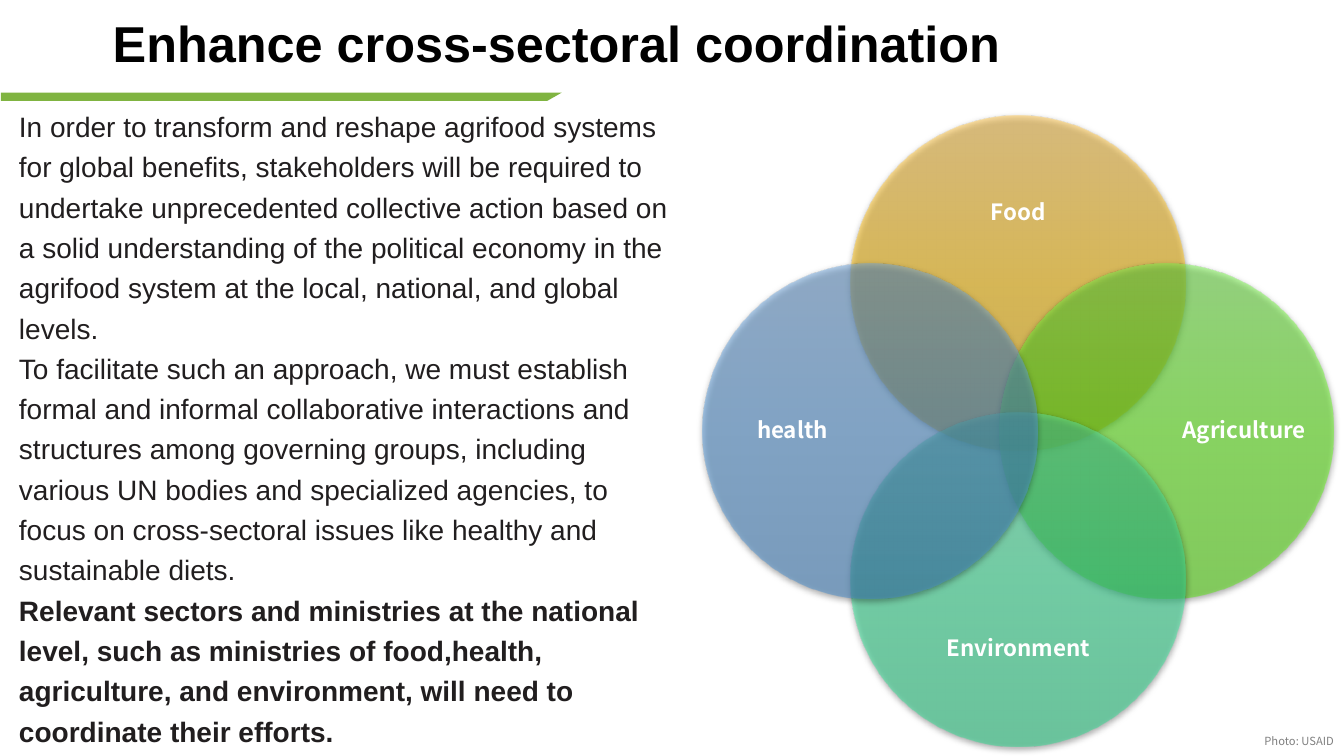
from lxml import etree
from pptx import Presentation
from pptx.dml.color import RGBColor
from pptx.enum.shapes import MSO_SHAPE
from pptx.enum.text import MSO_ANCHOR, PP_ALIGN
from pptx.util import Inches, Pt

OVAL = MSO_SHAPE.OVAL
TOP, MIDDLE = MSO_ANCHOR.TOP, MSO_ANCHOR.MIDDLE
LEFT, CENTER, RIGHT = PP_ALIGN.LEFT, PP_ALIGN.CENTER, PP_ALIGN.RIGHT
DRAWING = "http://schemas.openxmlformats.org/drawingml/2006/main"

COLORS = {
    "title": "000000",
    "body": "211E1F",
    "credit": "808080",
    "label": "FFFFFF",
    "banner": "80B441",
    "shadow": "000000",
}
HEADING_FONT = "Arial"
LABEL_FONT = "Noto Sans CJK SC"

BODY = [
    ("In order to transform and reshape agrifood systems for global benefits, "
     "stakeholders will be required to undertake unprecedented collective action "
     "based on a solid understanding of the political economy in the agrifood "
     "system at the local, national, and global levels.", False),
    ("To facilitate such an approach, we must establish formal and informal "
     "collaborative interactions and structures among governing groups, including "
     "various UN bodies and specialized agencies, to focus on cross-sectoral "
     "issues like healthy and sustainable diets.", False),
    ("Relevant sectors and ministries at the national level, such as ministries "
     "of food,health, agriculture, and environment, will need to coordinate "
     "their efforts.", True),
]

# Sector name, direction from the centre (x, y), gradient from top to bottom
SECTORS = [
    ("Food", 0, -1, ("FFC64B", "FFC000", "E3AB00")),
    ("Agriculture", 1, 0, ("7AF350", "63F916", "56E50C")),
    ("Environment", 0, 1, ("5EE6A6", "37E99C", "27D88C")),
    ("health", -1, 0, ("71A6DB", "559BDB", "448ACA")),
]
VENN_X, VENN_Y = 10.1, 4.28
DIAMETER, CIRCLE_OFFSET = 3.32, 1.47
LABEL_OFFSET_X, LABEL_OFFSET_Y = 2.24, 2.16
LABEL_LONG, LABEL_SHORT = 2.55, 1.28


class SlideBuilder:
    def __init__(self, slide):
        self.slide = slide

    def text(self, box, paragraphs, size, color, font, align=LEFT, anchor=TOP,
             spacing=1.0, margins=True, shapes=None):
        """Add a text box; paragraphs are (text, bold) pairs."""
        shapes = shapes or self.slide.shapes
        shape = shapes.add_textbox(*[Inches(value) for value in box])
        frame = shape.text_frame
        frame.word_wrap = True
        frame.vertical_anchor = anchor
        if not margins:
            frame.margin_left = frame.margin_right = 0
            frame.margin_top = frame.margin_bottom = 0
        for index, (text, bold) in enumerate(paragraphs):
            paragraph = frame.add_paragraph() if index else frame.paragraphs[0]
            paragraph.text = text
            paragraph.alignment = align
            paragraph.line_spacing = spacing
            paragraph.font.name = font
            paragraph.font.size = Pt(size)
            paragraph.font.bold = bold
            paragraph.font.color.rgb = RGBColor.from_string(COLORS[color])

    def banner(self, points, color):
        start, *others = [(Inches(x), Inches(y)) for x, y in points]
        builder = self.slide.shapes.build_freeform(*start)
        builder.add_line_segments(others, close=True)
        shape = builder.convert_to_shape()
        shape.shadow.inherit = False
        shape.fill.solid()
        shape.fill.fore_color.rgb = RGBColor.from_string(COLORS[color])
        shape.line.fill.background()

    def circle(self, shapes, center_x, center_y, gradient):
        """Add a half-transparent gradient circle with a soft shadow."""
        shape = shapes.add_shape(
            OVAL, Inches(center_x - DIAMETER / 2), Inches(center_y - DIAMETER / 2),
            Inches(DIAMETER), Inches(DIAMETER))
        shape.shadow.inherit = False
        shape.line.fill.background()
        stops = "".join(
            f'<a:gs pos="{index * 50000}"><a:srgbClr val="{color}">'
            f'<a:alpha val="50000"/></a:srgbClr></a:gs>'
            for index, color in enumerate(gradient))
        properties = shape._element.spPr
        fill = etree.fromstring(
            f'<a:gradFill xmlns:a="{DRAWING}" rotWithShape="1"><a:gsLst>{stops}'
            f'</a:gsLst><a:lin ang="5400000" scaled="0"/></a:gradFill>')
        properties.find(f"{{{DRAWING}}}prstGeom").addnext(fill)
        shadow = etree.fromstring(
            f'<a:outerShdw xmlns:a="{DRAWING}" blurRad="{Pt(4.5)}" '
            f'dist="{Pt(1.5)}" dir="5400000" rotWithShape="0">'
            f'<a:srgbClr val="{COLORS["shadow"]}"><a:alpha val="63000"/>'
            f'</a:srgbClr></a:outerShdw>')
        properties.find(f"{{{DRAWING}}}effectLst").append(shadow)

    def venn(self, sectors):
        shapes = self.slide.shapes.add_group_shape().shapes
        for name, across, down, gradient in sectors:
            self.circle(shapes, VENN_X + across * CIRCLE_OFFSET,
                        VENN_Y + down * CIRCLE_OFFSET, gradient)
            # Side labels stand in tall boxes, the others in wide ones
            width, height = ((LABEL_SHORT, LABEL_LONG) if across
                             else (LABEL_LONG, LABEL_SHORT))
            box = (VENN_X + across * LABEL_OFFSET_X - width / 2,
                   VENN_Y + down * LABEL_OFFSET_Y - height / 2, width, height)
            self.text(box, [(name, True)], 16, "label", LABEL_FONT, CENTER, MIDDLE,
                      0.9, margins=False, shapes=shapes)


def main():
    presentation = Presentation()
    presentation.slide_width = Inches(13.33)
    presentation.slide_height = Inches(7.5)
    builder = SlideBuilder(
        presentation.slides.add_slide(presentation.slide_layouts[6]))

    # Banner under the title
    builder.banner([(0.01, 0.92), (0.01, 1), (5.43, 1), (5.57, 0.92)], "banner")

    # Photo credit and title
    builder.text((11.01, 7.24, 2.32, 0.24), [("Photo: USAID", False)],
                 8, "credit", LABEL_FONT, RIGHT)
    builder.text((1.02, 0.14, 10.6, 0.63),
                 [("Enhance cross-sectoral coordination", True)],
                 36, "title", HEADING_FONT, anchor=MIDDLE, spacing=Pt(38))

    # Overlapping sectors
    builder.venn(SECTORS)

    # Body text
    builder.text((0.09, 0.97, 6.7, 6.53), BODY, 20, "body", HEADING_FONT,
                 spacing=1.2)

    presentation.save("out.pptx")


if __name__ == "__main__":
    main()
